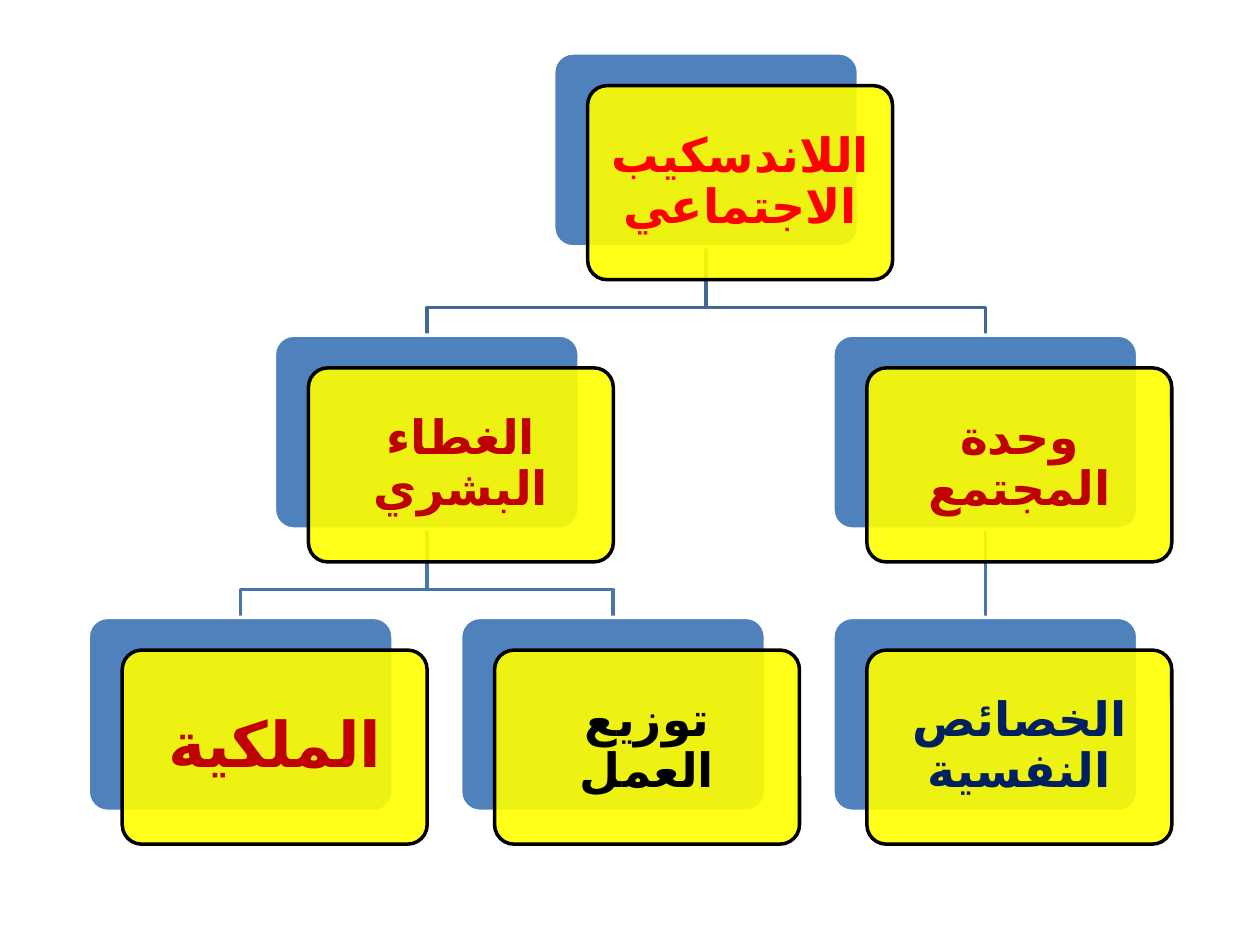
from lxml import etree
from pptx import Presentation
from pptx.dml.color import RGBColor
from pptx.enum.shapes import MSO_CONNECTOR, MSO_SHAPE
from pptx.enum.text import MSO_ANCHOR, PP_ALIGN
from pptx.oxml.ns import qn
from pptx.util import Inches, Pt

ROUNDED = MSO_SHAPE.ROUNDED_RECTANGLE
STRAIGHT = MSO_CONNECTOR.STRAIGHT
MIDDLE = MSO_ANCHOR.MIDDLE
CENTER = PP_ALIGN.CENTER

BLUE = RGBColor(0x4F, 0x81, 0xBD)
YELLOW = RGBColor(0xFF, 0xFF, 0x00)
WHITE = RGBColor(0xFF, 0xFF, 0xFF)
BLACK = RGBColor(0x00, 0x00, 0x00)
RED = RGBColor(0xFF, 0x00, 0x00)
DARK_RED = RGBColor(0xC0, 0x00, 0x00)
NAVY = RGBColor(0x00, 0x20, 0x60)
UPPER_LINK = RGBColor(0x3F, 0x67, 0x97)
LOWER_LINK = RGBColor(0x48, 0x75, 0xAC)

LEFT, TOP = 0.7, 0.42
TREE_SPAN, ROW_STEP = 5.91, 2.24
WIDTH, HEIGHT = 2.42, 1.54
SHIFT_X, SHIFT_Y, BEND = 0.27, 0.26, 0.48


def write_text(shape, text, size=27, color=BLACK, inset=0.11):
    frame = shape.text_frame
    frame.word_wrap = True
    frame.vertical_anchor = MIDDLE
    frame.margin_left = frame.margin_right = Inches(inset)
    frame.margin_top = frame.margin_bottom = Inches(inset)
    paragraph = frame.paragraphs[0]
    paragraph.alignment = CENTER
    paragraph.line_spacing = 0.9
    paragraph._p.get_or_add_pPr().set("rtl", "1")
    run = paragraph.add_run()
    run.text = text
    run.font.name = "Calibri"
    run.font.size = Pt(size)
    run.font.bold = True
    run.font.color.rgb = color
    properties = run._r.get_or_add_rPr()
    properties.set("lang", "ar-SA")
    etree.SubElement(properties, qn("a:cs"), typeface="Calibri")


def add_panel(x, y, fill, line):
    panel = slide.shapes.add_shape(ROUNDED, Inches(x), Inches(y), Inches(WIDTH), Inches(HEIGHT))
    panel.adjustments[0] = 0.1
    panel.shadow.inherit = False
    panel.fill.solid()
    panel.fill.fore_color.rgb = fill
    panel.line.color.rgb = line
    panel.line.width = Pt(2)
    return panel


prs = Presentation()
prs.slide_width, prs.slide_height = Inches(10), Inches(7.5)
slide = prs.slides.add_slide(prs.slide_layouts[6])

topics = {
    "landscape": (1.25, 0, "اللاندسكيب الاجتماعي", {"color": RED}),
    "cover": (0.5, 1, "الغطاء البشري", {"color": DARK_RED}),
    "ownership": (0, 2, "الملكية", {"color": DARK_RED, "size": 36, "inset": 0.15}),
    "labour": (1, 2, "توزيع العمل", {"color": BLACK}),
    "community": (2, 1, "وحدة المجتمع", {"color": DARK_RED}),
    "traits": (2, 2, "الخصائص النفسية", {"color": NAVY}),
}
corners = {
    topic: (LEFT + column * TREE_SPAN / 2, TOP + row * ROW_STEP)
    for topic, (column, row, _, _) in topics.items()
}

x, y = corners["community"]
middle = Inches(x + WIDTH / 2)
traits_link = slide.shapes.add_connector(
    STRAIGHT, middle, Inches(y + HEIGHT), middle, Inches(y + ROW_STEP))
traits_link.line.color.rgb = LOWER_LINK
traits_link.line.width = Pt(2)
etree.SubElement(traits_link._element.spPr, qn("a:effectLst"))

branches = [
    ("landscape", "community", UPPER_LINK),
    ("cover", "labour", LOWER_LINK),
    ("cover", "ownership", LOWER_LINK),
    ("landscape", "cover", UPPER_LINK),
]
for parent, child, color in branches:
    parent_x, child_x = (Inches(corners[topic][0] + WIDTH / 2) for topic in (parent, child))
    start_y = corners[parent][1] + HEIGHT
    bend_y = Inches(start_y + BEND)
    builder = slide.shapes.build_freeform(parent_x, Inches(start_y))
    builder.add_line_segments(
        [(parent_x, bend_y), (child_x, bend_y), (child_x, Inches(corners[child][1]))],
        close=False)
    branch = builder.convert_to_shape()
    branch.shadow.inherit = False
    branch.fill.background()
    branch.line.color.rgb = color
    branch.line.width = Pt(2)

backs = {}
for topic, (_, _, label, style) in topics.items():
    x, y = corners[topic]
    backs[topic] = add_panel(x, y, BLUE, WHITE)
    card = add_panel(x + SHIFT_X, y + SHIFT_Y, YELLOW, BLACK)
    tint = card._element.spPr.find(qn("a:solidFill"))[0]
    etree.SubElement(tint, qn("a:alpha"), val="90000")
    write_text(card, label, **style)

traits_link.begin_connect(backs["community"], 2)
traits_link.end_connect(backs["traits"], 0)

prs.save("out.pptx")
